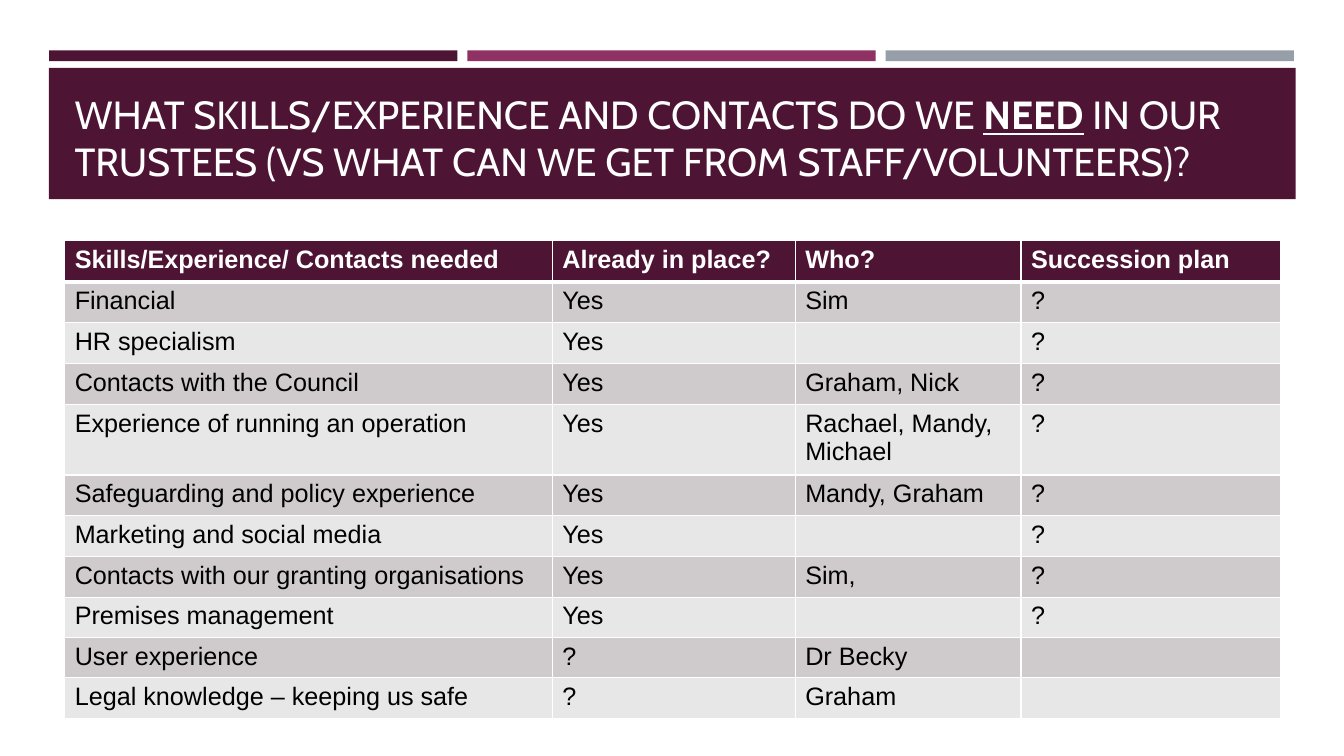
"""Build the slide on the skills, experience and contacts needed in trustees."""
import dataclasses

import lxml.etree
import pptx
import pptx.dml.color
import pptx.enum.shapes
import pptx.enum.text
import pptx.oxml.ns
import pptx.util

Cm = pptx.util.Cm


@dataclasses.dataclass(frozen=True)
class Theme:
    plum: str = "4D1434"
    magenta: str = "903163"
    grey: str = "969FA7"
    dark_band: str = "CFCACC"
    light_band: str = "E8E7E7"
    white: str = "FFFFFF"
    black: str = "000000"
    title_font: str = "Cabin"
    table_font: str = "Arial"
    title_size: int = 28
    table_size: int = 18
    thin_border: int = 1
    header_border: int = 3


theme = Theme()


def format_run(run, color, **formats):
    for attribute, value in formats.items():
        setattr(run.font, attribute, value)
    run.font.color.rgb = pptx.dml.color.RGBColor.from_string(color)


def add_block(left, top, width, height, color):
    block = slide.shapes.add_shape(
        pptx.enum.shapes.MSO_SHAPE.RECTANGLE, Cm(left), Cm(top), Cm(width), Cm(height))
    block.shadow.inherit = False
    block.fill.solid()
    block.fill.fore_color.rgb = pptx.dml.color.RGBColor.from_string(color)
    block.line.fill.background()


presentation = pptx.Presentation()
presentation.slide_width = Cm(33.87)
presentation.slide_height = Cm(19.05)
slide = presentation.slides.add_slide(presentation.slide_layouts[6])

for position, stripe_color in enumerate([theme.plum, theme.magenta, theme.grey]):
    add_block(1.24 + position * 10.54, 1.27, 10.29, 0.27, stripe_color)
add_block(1.23, 1.71, 31.42, 3.31, theme.plum)

title = slide.shapes.add_textbox(Cm(1.63), Cm(1.96), Cm(30.63), Cm(2.82)).text_frame
title_format = {
    "word_wrap": True,
    "vertical_anchor": pptx.enum.text.MSO_ANCHOR.BOTTOM,
    "margin_left": Cm(0.25),
    "margin_right": Cm(0.25),
    "margin_top": Cm(0.13),
    "margin_bottom": Cm(0.13),
}
for attribute, value in title_format.items():
    setattr(title, attribute, value)
for words, emphasis in [
    ("WHAT SKILLS/EXPERIENCE AND CONTACTS DO WE ", False),
    ("NEED", True),
    (" IN OUR TRUSTEES (VS WHAT CAN WE GET FROM STAFF/VOLUNTEERS)?", False),
]:
    title_run = title.paragraphs[0].add_run()
    title_run.text = words
    format_run(title_run, theme.white, name=theme.title_font,
               size=pptx.util.Pt(theme.title_size), bold=emphasis, underline=emphasis)

skills = [
    ("Skills/Experience/ Contacts needed", "Already in place?", "Who?", "Succession plan"),
    ("Financial", "Yes", "Sim", "?"),
    ("HR specialism", "Yes", "", "?"),
    ("Contacts with the Council", "Yes", "Graham, Nick", "?"),
    ("Experience of running an operation", "Yes", "Rachael, Mandy, Michael", "?"),
    ("Safeguarding and policy experience", "Yes", "Mandy, Graham", "?"),
    ("Marketing and social media", "Yes", "", "?"),
    ("Contacts with our granting organisations", "Yes", "Sim,", "?"),
    ("Premises management", "Yes", "", "?"),
    ("User experience", "?", "Dr Becky", ""),
    ("Legal knowledge – keeping us safe", "?", "Graham", ""),
]
column_widths = [12.29, 6.12, 5.69, 6.53]
row_heights = [1.03] * 4 + [1.68] + [1.03] * 2 + [0.97] * 4

skills_table = slide.shapes.add_table(
    len(skills), len(column_widths), Cm(1.63), Cm(6.07),
    Cm(sum(column_widths)), Cm(sum(row_heights))).table
for column, width in zip(skills_table.columns, column_widths):
    column.width = Cm(width)
for row, height in zip(skills_table.rows, row_heights):
    row.height = Cm(height)

for row_number, entries in enumerate(skills):
    is_header = row_number == 0
    band = theme.dark_band if row_number % 2 else theme.light_band
    row_fill = theme.plum if is_header else band
    border_widths = {
        "a:lnL": theme.thin_border,
        "a:lnR": theme.thin_border,
        "a:lnT": theme.header_border if row_number == 1 else theme.thin_border,
        "a:lnB": theme.header_border if is_header else theme.thin_border,
    }
    for column_number, entry in enumerate(entries):
        cell = skills_table.cell(row_number, column_number)
        cell.text = entry
        for run in cell.text_frame.paragraphs[0].runs:
            format_run(run, theme.white if is_header else theme.black,
                       name=theme.table_font, size=pptx.util.Pt(theme.table_size),
                       bold=is_header)
        properties = cell._tc.get_or_add_tcPr()
        for side, points in border_widths.items():
            border = lxml.etree.SubElement(
                properties, pptx.oxml.ns.qn(side), w=str(pptx.util.Pt(points)))
            border_fill = lxml.etree.SubElement(border, pptx.oxml.ns.qn("a:solidFill"))
            lxml.etree.SubElement(
                border_fill, pptx.oxml.ns.qn("a:srgbClr"), val=theme.white)
        cell.fill.solid()
        cell.fill.fore_color.rgb = pptx.dml.color.RGBColor.from_string(row_fill)

presentation.save("out.pptx")
